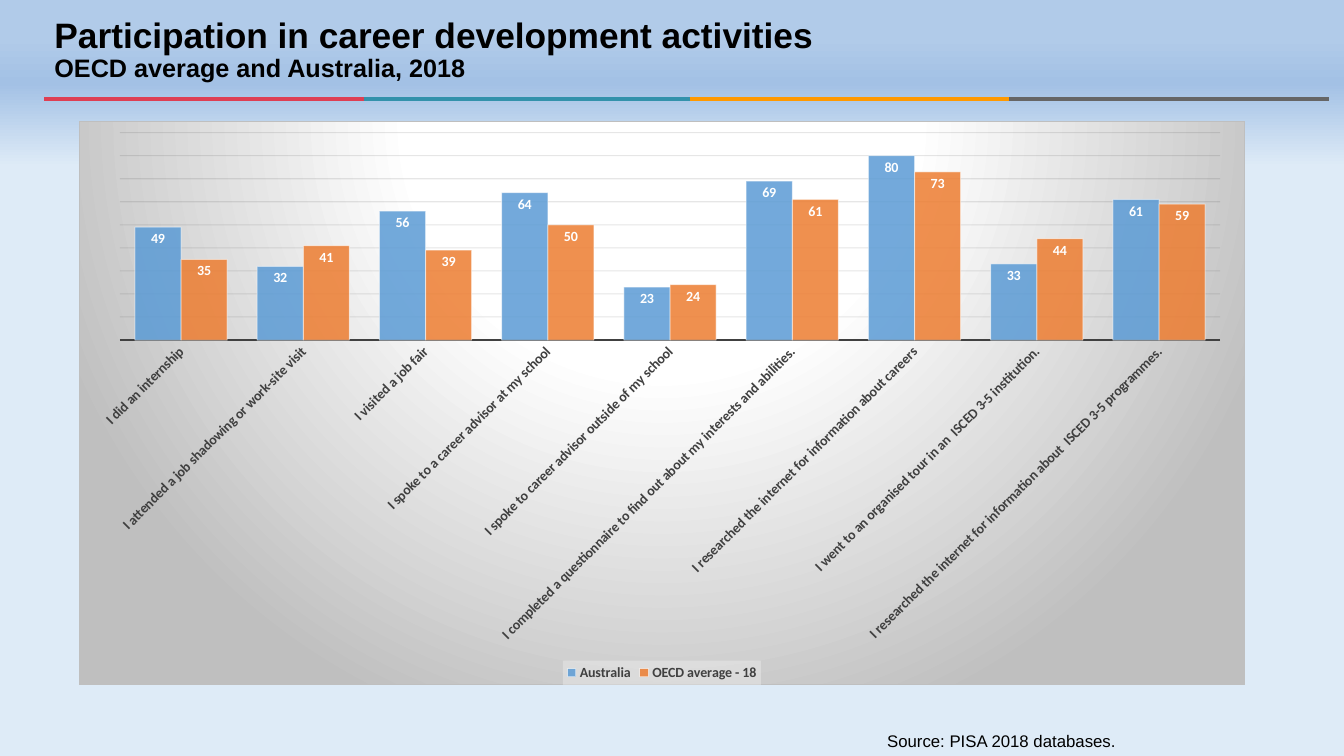
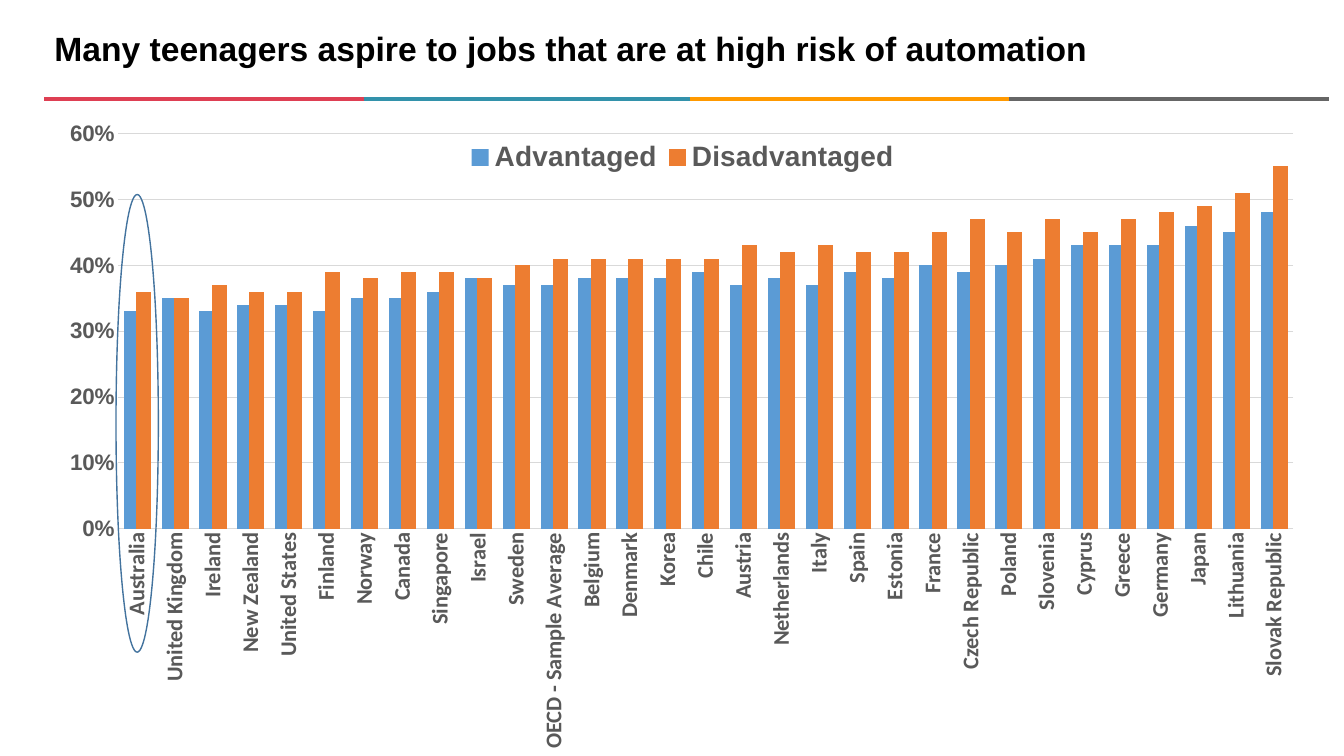
import dataclasses

import lxml.etree
import pptx
import pptx.chart.data
import pptx.dml.color
import pptx.enum.chart
import pptx.enum.shapes
import pptx.enum.text
import pptx.oxml
import pptx.oxml.ns
import pptx.util

Pt = pptx.util.Pt
qn = pptx.oxml.ns.qn
XL = pptx.enum.chart
NO_TICKS = XL.XL_TICK_MARK.NONE
SLIDE_WIDTH, SLIDE_HEIGHT = pptx.util.Inches(13.33), pptx.util.Inches(7.5)


@dataclasses.dataclass(frozen=True)
class Theme:
    ink: str = "000000"
    white: str = "FFFFFF"
    axis_dark: str = "404040"
    axis_grey: str = "595959"
    grid_dark: str = "0D0D0D"
    grid_grey: str = "D9D9D9"
    panel_grey: str = "BFBFBF"
    legend_panel: str = "F2F2F2"
    highlight: str = "43739E"
    series: tuple = ("5B9BD5", "ED7D31")
    bands: tuple = ("DE3F53", "3392AB", "FF9900", "666666")
    sky: tuple = ((5, "B1CBE9"), (11, "A3C1E5"), (22, "DEEBF7"))
    heading: str = "Arial"
    label: str = "Calibri"
    title_size: float = 25.2
    headline_size: float = 24
    subtitle_size: float = 18
    source_size: float = 12
    small: float = 10
    medium: float = 16
    large: float = 20


THEME = Theme()

# Places in percent of the slide: left, top, width, height
TITLE_BOX = (3.3, 1.47, 95.65, 10.4)
SOURCE_BOX = (65.27, 96, 18.98, 4)
ACTIVITIES_BOX = (5.85, 16, 86.8, 74.67)
AUTOMATION_BOX = (3.3, 14.27, 94.82, 93.33)
AUSTRALIA_BOX = (8.63, 25.73, 3.15, 60.53)
BAND_EDGES = (3.3, 27.08, 51.31, 75.09, 98.87)
BAND_TOP = 13.07

ACTIVITIES = {
    "I did an internship": (49, 35),
    "I attended a job shadowing or work-site visit": (32, 41),
    "I visited a job fair": (56, 39),
    "I spoke to a career advisor at my school": (64, 50),
    "I spoke to career advisor outside of my school": (23, 24),
    "I completed a questionnaire to find out about my interests and abilities.": (69, 61),
    "I researched the internet for information about careers": (80, 73),
    "I went to an organised tour in an  ISCED 3-5 institution.": (33, 44),
    "I researched the internet for information about  ISCED 3-5 programmes.": (61, 59),
}

AUTOMATION_RISK = {
    "Australia": (0.33, 0.36), "United Kingdom": (0.35, 0.35),
    "Ireland": (0.33, 0.37), "New Zealand": (0.34, 0.36),
    "United States": (0.34, 0.36), "Finland": (0.33, 0.39),
    "Norway": (0.35, 0.38), "Canada": (0.35, 0.39),
    "Singapore": (0.36, 0.39), "Israel": (0.38, 0.38),
    "Sweden": (0.37, 0.4), "OECD - Sample Average": (0.37, 0.41),
    "Belgium": (0.38, 0.41), "Denmark": (0.38, 0.41),
    "Korea": (0.38, 0.41), "Chile": (0.39, 0.41),
    "Austria": (0.37, 0.43), "Netherlands": (0.38, 0.42),
    "Italy": (0.37, 0.43), "Spain": (0.39, 0.42),
    "Estonia": (0.38, 0.42), "France": (0.4, 0.45),
    "Czech Republic": (0.39, 0.47), "Poland": (0.4, 0.45),
    "Slovenia": (0.41, 0.47), "Cyprus": (0.43, 0.45),
    "Greece": (0.43, 0.47), "Germany": (0.43, 0.48),
    "Japan": (0.46, 0.49), "Lithuania": (0.45, 0.51),
    "Slovak Republic": (0.48, 0.55),
}


# Formatting helpers
def across(percent):
    return round(SLIDE_WIDTH * percent / 100)


def down(percent):
    return round(SLIDE_HEIGHT * percent / 100)


def place(box):
    left, top, width, height = box
    return across(left), down(top), across(width), down(height)


def assign(target, values):
    for name, value in values.items():
        setattr(target, name, value)


def rgb(colour):
    return pptx.dml.color.RGBColor.from_string(colour)


def style_font(font, size, colour=THEME.ink, face=THEME.heading, bold=True):
    assign(font, {"size": Pt(size), "name": face, "bold": bold})
    font.color.rgb = rgb(colour)


def set_opacity(fill_parent, percent):
    for colour in fill_parent.iter(qn("a:srgbClr")):
        lxml.etree.SubElement(colour, qn("a:alpha")).set("val", str(percent * 1000))


def style_line(line, colour, width, opacity=None):
    line.color.rgb = rgb(colour)
    line.width = Pt(width)
    if opacity:
        set_opacity(line._get_or_add_ln(), opacity)


def drawing_xml(xml):
    return pptx.oxml.parse_xml(xml.replace(">", " " + pptx.oxml.ns.nsdecls("a", "c") + ">", 1))


def gradient_xml(stops, direction):
    stop_list = "".join(
        f'<a:gs pos="{pos * 1000}"><a:srgbClr val="{colour}"/></a:gs>' for pos, colour in stops)
    return f'<a:gradFill rotWithShape="1"><a:gsLst>{stop_list}</a:gsLst>{direction}</a:gradFill>'


# Slide parts
def add_bands(slide):
    for start, end, colour in zip(BAND_EDGES, BAND_EDGES[1:], THEME.bands):
        band = slide.shapes.add_connector(
            pptx.enum.shapes.MSO_CONNECTOR.STRAIGHT,
            across(start), down(BAND_TOP), across(end), down(BAND_TOP))
        style_line(band.line, colour, 2.75)
        lxml.etree.SubElement(band._element.spPr, qn("a:effectLst"))


def add_title(slide, lines):
    title = slide.shapes.title
    assign(title, dict(zip(("left", "top", "width", "height"), place(TITLE_BOX))))
    assign(title.text_frame, {
        "vertical_anchor": pptx.enum.text.MSO_ANCHOR.MIDDLE,
        "auto_size": pptx.enum.text.MSO_AUTO_SIZE.NONE,
        "word_wrap": True})
    paragraph = title.text_frame.paragraphs[0]
    assign(paragraph, {"alignment": pptx.enum.text.PP_ALIGN.LEFT, "line_spacing": 0.9})
    for index, (text, size) in enumerate(lines):
        if index:
            paragraph.add_line_break()
        run = paragraph.add_run()
        run.text = text
        style_font(run.font, size)


def new_slide(deck, title_lines):
    slide = deck.slides.add_slide(deck.slide_layouts.get_by_name("Title Only"))
    add_bands(slide)
    add_title(slide, title_lines)
    return slide


def set_sky_background(slide):
    slide.background.fill.solid()
    plain = slide._element.find(".//" + qn("a:solidFill"))
    sky = gradient_xml(THEME.sky, '<a:lin ang="5400000" scaled="0"/>')
    plain.getparent().replace(plain, drawing_xml(sky))


def add_source(slide, text):
    source = slide.shapes.add_textbox(*place(SOURCE_BOX))
    assign(source.text_frame, {
        "word_wrap": False, "auto_size": pptx.enum.text.MSO_AUTO_SIZE.SHAPE_TO_FIT_TEXT})
    run = source.text_frame.paragraphs[0].add_run()
    run.text = text
    style_font(run.font, THEME.source_size, bold=False)


def add_highlight(slide, box):
    ring = slide.shapes.add_shape(pptx.enum.shapes.MSO_SHAPE.OVAL, *place(box))
    ring.shadow.inherit = False
    ring.fill.background()
    style_line(ring.line, THEME.highlight, 1)


# Chart parts
def set_layout(parent, position, box, inner=False):
    """Fix a chart part at percentages of the chart's own size."""
    for old in parent.findall(qn("c:layout")):
        parent.remove(old)
    target = '<c:layoutTarget val="inner"/>' if inner else ""
    modes = '<c:xMode val="edge"/><c:yMode val="edge"/>'
    sizes = "".join(f'<c:{key} val="{value / 100:.4f}"/>' for key, value in zip("xywh", box))
    parent.insert(position, drawing_xml(
        f"<c:layout><c:manualLayout>{target}{modes}{sizes}</c:manualLayout></c:layout>"))


def add_columns(slide, box, data, names, number_format, gap, overlap, plot_box):
    chart_data = pptx.chart.data.CategoryChartData(number_format=number_format)
    chart_data.categories = list(data)
    for name, values in zip(names, zip(*data.values())):
        chart_data.add_series(name, values)
    chart = slide.shapes.add_chart(
        XL.XL_CHART_TYPE.COLUMN_CLUSTERED, *place(box), chart_data).chart
    chart.has_title = False
    chart.font.size = Pt(THEME.small)
    plot = chart.plots[0]
    assign(plot, {"gap_width": gap, "overlap": overlap, "vary_by_categories": False})
    for series, colour in zip(plot.series, THEME.series):
        series.format.fill.solid()
        series.format.fill.fore_color.rgb = rgb(colour)
        series.invert_if_negative = False
    set_layout(chart._chartSpace.chart.plotArea, 0, plot_box, inner=True)
    return chart


def style_categories(chart, size, colour, line_colour, line_width, angle):
    axis = chart.category_axis
    assign(axis, {"major_tick_mark": NO_TICKS, "minor_tick_mark": NO_TICKS})
    style_font(axis.tick_labels.font, size, colour, THEME.label)
    style_line(axis.format.line, line_colour, line_width)
    body = axis._element.find(qn("c:txPr")).find(qn("a:bodyPr"))
    body.set("rot", str(angle * 60000))
    body.set("vert", "horz")


def style_values(chart, maximum, step, number_format, grid_colour, grid_opacity=None):
    axis = chart.value_axis
    assign(axis, {
        "minimum_scale": 0, "maximum_scale": maximum, "major_unit": step,
        "major_tick_mark": NO_TICKS, "minor_tick_mark": NO_TICKS,
        "has_major_gridlines": True})
    assign(axis.tick_labels, {"number_format": number_format, "number_format_is_linked": False})
    style_line(axis.major_gridlines.format.line, grid_colour, 0.75, grid_opacity)
    axis.format.line.fill.background()
    return axis


def add_legend(chart, size, colour, face, box):
    chart.has_legend = True
    legend = chart.legend
    assign(legend, {"position": XL.XL_LEGEND_POSITION.BOTTOM, "include_in_layout": False})
    style_font(legend.font, size, colour, face)
    set_layout(legend._element, 1, box)
    return legend


def add_value_labels(series):
    labels = series.data_labels
    assign(labels, {
        "show_value": True, "position": XL.XL_LABEL_POSITION.INSIDE_END,
        "number_format": "0", "number_format_is_linked": False})
    style_font(labels.font, THEME.small, THEME.white, THEME.label)


def add_glow_panel(chart):
    glow = gradient_xml(
        ((0, THEME.white), (39, THEME.white), (100, THEME.panel_grey)),
        '<a:path path="circle"><a:fillToRect l="50000" t="-80000" r="50000" b="180000"/></a:path>')
    border = (f'<a:ln w="{Pt(0.75)}"><a:solidFill><a:srgbClr val="{THEME.panel_grey}"/>'
              "</a:solidFill></a:ln>")
    chart._chartSpace.chart.addnext(drawing_xml(f"<c:spPr>{glow}{border}</c:spPr>"))


def add_legend_panel(legend):
    panel = drawing_xml(f'<c:spPr><a:solidFill><a:srgbClr val="{THEME.legend_panel}"/>'
                        "</a:solidFill></c:spPr>")
    set_opacity(panel, 39)
    legend._element.find(qn("c:txPr")).addprevious(panel)


# Slides
def build_activities(deck):
    slide = new_slide(deck, (
        ("Participation in career development activities ", THEME.title_size),
        ("OECD average and Australia, 2018", THEME.subtitle_size)))
    set_sky_background(slide)
    add_source(slide, "Source: PISA 2018 databases.")
    chart = add_columns(slide, ACTIVITIES_BOX, ACTIVITIES, ("Australia", "OECD average - 18"),
                        "0", 65, 0, (3.5, 2, 94.4, 36.8))
    style_categories(chart, THEME.small, THEME.axis_dark, THEME.axis_dark, 1.5, -45)
    style_values(chart, 90, 10, "0", THEME.grid_dark, 10).visible = False
    for series in chart.plots[0].series:
        set_opacity(series._element.spPr, 85)
        style_line(series.format.line, THEME.white, 0.75, 50)
        add_value_labels(series)
    add_legend_panel(add_legend(
        chart, THEME.small, THEME.axis_dark, THEME.label, (41.5, 95.7, 17, 4.3)))
    add_glow_panel(chart)


def build_automation(deck):
    slide = new_slide(deck, (
        ("Many teenagers aspire to jobs that are at high risk of automation",
         THEME.headline_size),))
    chart = add_columns(slide, AUTOMATION_BOX, AUTOMATION_RISK, ("Advantaged", "Disadvantaged"),
                        "0%", 72, 19, (5.8, 3.6, 92.2, 56.1))
    style_categories(chart, THEME.medium, THEME.axis_grey, THEME.grid_grey, 0.75, -90)
    shares = style_values(chart, 0.6, 0.1, "0%", THEME.grid_grey)
    style_font(shares.tick_labels.font, THEME.medium, THEME.axis_grey)
    add_legend(chart, THEME.large, THEME.axis_grey, THEME.heading, (32.6, 4.3, 35, 5.5))
    add_highlight(slide, AUSTRALIA_BOX)


def main():
    deck = pptx.Presentation()
    assign(deck, {"slide_width": SLIDE_WIDTH, "slide_height": SLIDE_HEIGHT})
    build_activities(deck)
    build_automation(deck)
    deck.save("out.pptx")


if __name__ == "__main__":
    main()
